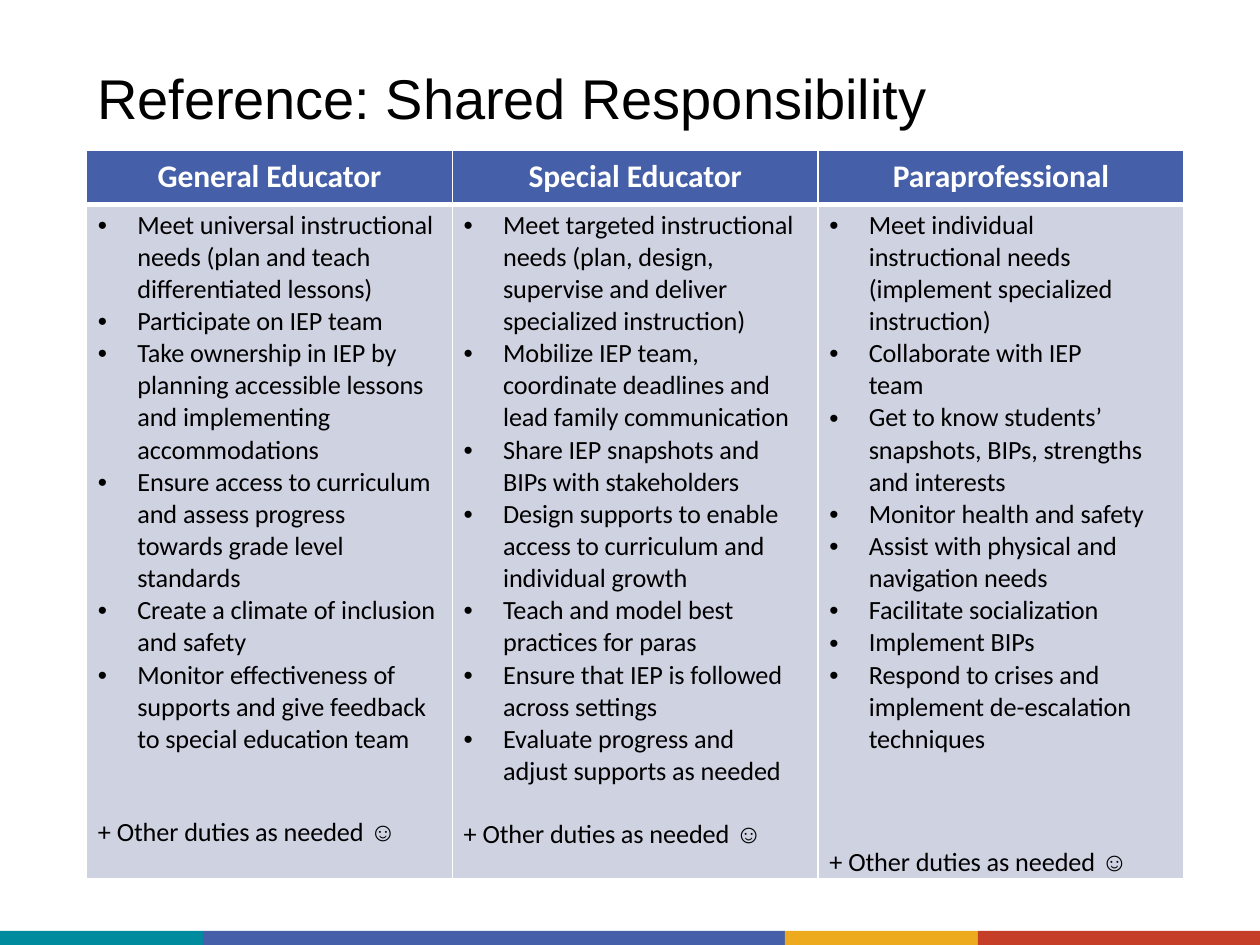
from dataclasses import dataclass

from lxml import etree
from pptx import Presentation
from pptx.dml.color import RGBColor
from pptx.enum.shapes import MSO_SHAPE
from pptx.enum.text import MSO_ANCHOR, MSO_AUTO_SIZE, PP_ALIGN
from pptx.oxml.ns import qn
from pptx.util import Pt

RECTANGLE = MSO_SHAPE.RECTANGLE
TOP, BOTTOM = MSO_ANCHOR.TOP, MSO_ANCHOR.BOTTOM
LEFT, CENTER = PP_ALIGN.LEFT, PP_ALIGN.CENTER
NO_AUTOFIT = MSO_AUTO_SIZE.NONE
TITLE_ONLY_LAYOUT = 5


@dataclass(frozen=True)
class Theme:
    """Colours, fonts and type sizes of the slide."""
    white: str = "FFFFFF"
    black: str = "000000"
    blue: str = "455FA9"
    pale_blue: str = "CFD2E1"
    teal: str = "008B9F"
    gold: str = "EEAA1F"
    red: str = "C53E28"
    title_font: str = "Arial"
    table_font: str = "Calibri"
    title_size: float = 32
    header_size: float = 18
    body_size: float = 15
    tracking: str = "-5"


THEME = Theme()


@dataclass(frozen=True)
class Role:
    """One column: its heading, duties, right margin and gap above the closing line."""
    heading: str
    duties: tuple
    right_margin: float
    closing_gap: float


ROLES = (
    Role("General Educator", (
        "Meet universal instructional needs (plan and teach differentiated lessons)",
        "Participate on IEP team",
        "Take ownership in IEP by planning accessible lessons and implementing accommodations",
        "Ensure access to curriculum and assess progress\vtowards grade level standards",
        "Create a climate of inclusion and safety",
        "Monitor effectiveness of supports and give feedback to special education team",
    ), 7, 35),
    Role("Special Educator", (
        "Meet targeted instructional needs (plan, design, supervise and deliver specialized instruction)",
        "Mobilize IEP team, coordinate deadlines and lead family communication",
        "Share IEP snapshots and BIPs with stakeholders",
        "Design supports to enable access to curriculum and individual growth",
        "Teach and model best practices for paras",
        "Ensure that IEP is followed across settings",
        "Evaluate progress and adjust supports as needed",
    ), 11, 17.5),
    Role("Paraprofessional", (
        "Meet individual instructional needs (implement specialized instruction)",
        "Collaborate with IEP\vteam",
        "Get to know students’ snapshots, BIPs, strengths and interests",
        "Monitor health and safety",
        "Assist with physical and navigation needs",
        "Facilitate socialization",
        "Implement BIPs",
        "Respond to crises and implement de-escalation techniques",
    ), 18, 52),
)
CLOSING_LINE = "+ Other duties as needed "


def style_paragraph(paragraph, font_name, size, color, bold=False, align=LEFT):
    """Format a paragraph and tighten the tracking of its runs."""
    paragraph.alignment = align
    font = paragraph.font
    font.name, font.size, font.bold = font_name, Pt(size), bold
    font.color.rgb = RGBColor.from_string(color)
    for run in paragraph.runs:
        run._r.get_or_add_rPr().set("spc", THEME.tracking)


def indent_paragraph(paragraph, left, first=0, right=0, bullet=None):
    """Set the indents of a paragraph and its optional bullet."""
    properties = paragraph._p.get_or_add_pPr()
    for name, value in (("marL", left), ("indent", first), ("marR", right)):
        properties.set(name, str(int(Pt(value))))
    if bullet:
        etree.SubElement(properties, qn("a:buFont"), typeface=THEME.title_font)
        etree.SubElement(properties, qn("a:buChar"), char=bullet)


def style_cell(cell, color, top_margin, top_line, bottom_line):
    """Set the margins, white borders and fill of a table cell."""
    cell.margin_left = cell.margin_right = cell.margin_bottom = Pt(0)
    cell.margin_top = Pt(top_margin)
    cell.vertical_anchor = TOP
    properties = cell._tc.get_or_add_tcPr()
    for side, width in (("L", 1), ("R", 1), ("T", top_line), ("B", bottom_line)):
        line = etree.SubElement(properties, qn(f"a:ln{side}"), w=str(int(Pt(width))))
        fill = etree.SubElement(line, qn("a:solidFill"))
        etree.SubElement(fill, qn("a:srgbClr"), val=THEME.white)
    cell.fill.solid()
    cell.fill.fore_color.rgb = RGBColor.from_string(color)


def fill_header_cell(cell, heading):
    """Write a column heading."""
    style_cell(cell, THEME.blue, 4, 1, 3)
    paragraph = cell.text_frame.paragraphs[0]
    paragraph.text = heading
    style_paragraph(paragraph, THEME.table_font, THEME.header_size, THEME.white, True, CENTER)


def fill_duties_cell(cell, role):
    """Write the bulleted duties of a role and its closing line."""
    style_cell(cell, THEME.pale_blue, 2.5, 3, 1)
    frame = cell.text_frame
    for index, duty in enumerate(role.duties):
        paragraph = frame.add_paragraph() if index else frame.paragraphs[0]
        paragraph.text = duty
        indent_paragraph(paragraph, 29, -22.5, role.right_margin, "•")
        style_paragraph(paragraph, THEME.table_font, THEME.body_size, THEME.black)
    closing = frame.add_paragraph()
    closing.text = CLOSING_LINE
    smiley = closing.add_run()
    smiley.text = "☺"
    smiley.font.name = THEME.title_font
    indent_paragraph(closing, 6.5)
    closing.space_before = Pt(role.closing_gap)
    style_paragraph(closing, THEME.table_font, THEME.body_size, THEME.black)


def add_roles_table(slide, left, top, width, height, header_height):
    """Place the table of roles, one equal column each."""
    table = slide.shapes.add_table(
        2, len(ROLES), Pt(left), Pt(top), Pt(width), Pt(height)).table
    table.horz_banding = False
    table.rows[0].height = Pt(header_height)
    table.rows[1].height = Pt(height - header_height)
    for index, role in enumerate(ROLES):
        table.columns[index].width = Pt(width / len(ROLES))
        fill_header_cell(table.cell(0, index), role.heading)
        fill_duties_cell(table.cell(1, index), role)


def add_title(slide, left, top, width, height):
    """Place the slide title in its placeholder."""
    title = slide.shapes.title
    title.left, title.top, title.width, title.height = Pt(left), Pt(top), Pt(width), Pt(height)
    frame = title.text_frame
    frame.text = "Reference: Shared Responsibility"
    frame.margin_left = frame.margin_top = frame.margin_right = frame.margin_bottom = Pt(0)
    frame.word_wrap = False
    frame.auto_size = NO_AUTOFIT
    frame.vertical_anchor = BOTTOM
    style_paragraph(frame.paragraphs[0], THEME.title_font, THEME.title_size, THEME.black)


def add_footer_band(slide, left, top, width, height):
    """Place the band of colours, split by shares of its width."""
    shares = ((THEME.teal, 0.161), (THEME.blue, 0.462), (THEME.gold, 0.153), (THEME.red, 0.224))
    for color, share in shares:
        bar = slide.shapes.add_shape(RECTANGLE, Pt(left), Pt(top), Pt(width * share), Pt(height))
        bar.shadow.inherit = False
        bar.fill.solid()
        bar.fill.fore_color.rgb = RGBColor.from_string(color)
        bar.line.fill.background()
        left += width * share


def main():
    """Build and save the slide."""
    presentation = Presentation()
    presentation.slide_width, presentation.slide_height = Pt(720), Pt(540)
    slide = presentation.slides.add_slide(presentation.slide_layouts[TITLE_ONLY_LAYOUT])
    add_footer_band(slide, 0, 532, 720, 8)
    add_title(slide, 55.5, 35.5, 476, 39.5)
    add_roles_table(slide, 49.5, 86, 627, 412, 31)
    presentation.save("out.pptx")


if __name__ == "__main__":
    main()
